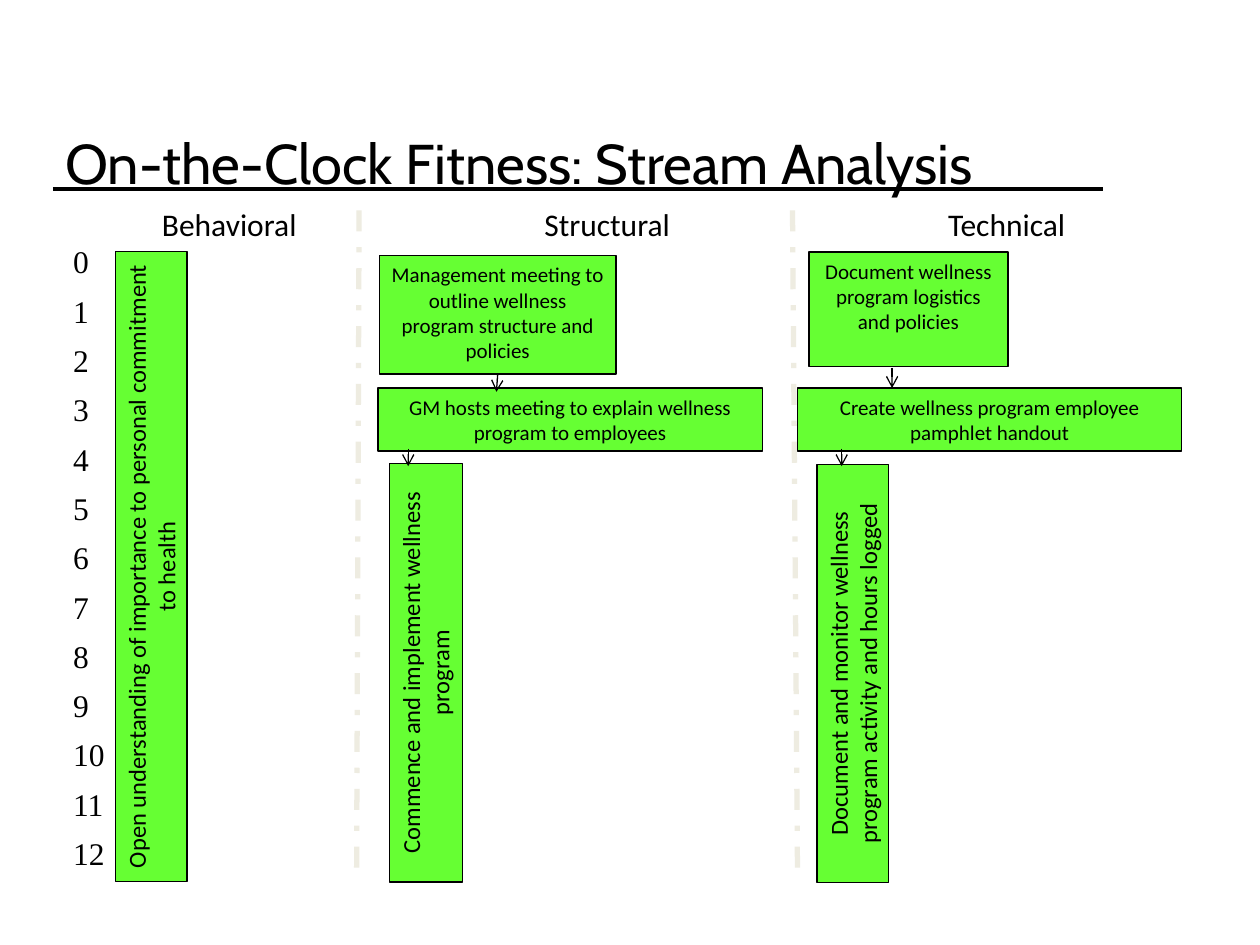
from lxml import etree
from pptx import Presentation
from pptx.dml.color import RGBColor
from pptx.enum.dml import MSO_LINE
from pptx.enum.shapes import MSO_CONNECTOR, MSO_SHAPE
from pptx.enum.text import MSO_ANCHOR, PP_ALIGN
from pptx.oxml.ns import qn
from pptx.util import Inches, Pt

BLACK = RGBColor(0x00, 0x00, 0x00)
GREEN = RGBColor(0x66, 0xFF, 0x33)
BEIGE = RGBColor(0xEE, 0xEC, 0xE1)

presentation = Presentation()
presentation.slide_width = Inches(10)
presentation.slide_height = Inches(7.5)
slide = presentation.slides.add_slide(presentation.slide_layouts[6])


def add_text(text, box, size=18, font="Calibri", align=PP_ALIGN.CENTER,
             anchor=MSO_ANCHOR.TOP, filled=False, rotation=0, inset=None,
             line_spacing=None, space_after=0):
    position = [Inches(value) for value in box]
    if filled:
        shape = slide.shapes.add_shape(MSO_SHAPE.RECTANGLE, *position)
        shape.shadow.inherit = False
        shape.fill.solid()
        shape.fill.fore_color.rgb = GREEN
        shape.line.color.rgb = BLACK
        shape.line.width = Pt(0.75)
    else:
        shape = slide.shapes.add_textbox(*position)
    shape.rotation = rotation
    frame = shape.text_frame
    frame.word_wrap = True
    frame.vertical_anchor = anchor
    if inset is not None:
        frame.margin_left = frame.margin_right = Inches(inset)
        frame.margin_top = frame.margin_bottom = Inches(inset)
    frame.text = text
    for paragraph in frame.paragraphs:
        paragraph.alignment = align
        paragraph.line_spacing = line_spacing
        paragraph.space_after = Pt(space_after)
        paragraph.font.size = Pt(size)
        paragraph.font.name = font
        paragraph.font.color.rgb = BLACK


def add_line(start, end, color=BLACK, width=0.75, dash=None, arrow=False):
    points = [Inches(value) for value in (*start, *end)]
    connector = slide.shapes.add_connector(MSO_CONNECTOR.STRAIGHT, *points)
    connector.line.color.rgb = color
    connector.line.width = Pt(width)
    if dash:
        connector.line.dash_style = dash
    if arrow:
        etree.SubElement(connector.line._get_or_add_ln(), qn("a:tailEnd"), type="arrow")
    etree.SubElement(connector._element.spPr, qn("a:effectLst"))


add_line((0.42, 1.5), (8.75, 1.5), width=2.25)
add_text("On-the-Clock Fitness: Stream Analysis", (0.42, 0.48, 8.5, 1.61),
         size=32, font="Cabin", align=PP_ALIGN.LEFT, anchor=MSO_ANCHOR.MIDDLE)

for heading, left in (("Behavioral", 1), ("Structural", 4), ("Technical", 7.17)):
    add_text(heading, (left, 1.58, 1.64, 0.29))

add_text("\n".join(str(number) for number in range(13)), (0.58, 1.97, 0.55, 5.16),
         font="Times New Roman", align=PP_ALIGN.LEFT, inset=0,
         line_spacing=0.85, space_after=9.8)

for top_x, bottom_x in ((2.85, 2.83), (6.29, 6.33)):
    add_line((top_x, 1.67), (bottom_x, 7), color=BEIGE, width=3, dash=MSO_LINE.DASH_DOT)

vertical_steps = (
    ("Open understanding of importance to personal commitment to health", (-1.3, 4.21, 5, 0.57)),
    ("Commence and implement wellness program", (1.72, 5.05, 3.32, 0.58)),
    ("Document and monitor wellness program activity and hours logged", (5.11, 5.06, 3.32, 0.57)),
)
for text, box in vertical_steps:
    add_text(text, box, size=14, filled=True, rotation=270)

horizontal_steps = (
    ("Management meeting to outline wellness program structure and policies", (3.01, 2.03, 1.88, 0.94)),
    ("GM hosts meeting to explain wellness program to employees", (3, 3.08, 3.05, 0.5)),
    ("Document wellness program logistics and policies", (6.42, 2, 1.58, 0.91)),
    ("Create wellness program employee pamphlet handout", (6.33, 3.08, 3.05, 0.5)),
)
for text, box in horizontal_steps:
    add_text(text, box, size=12, filled=True)

arrows = (
    ((3.95, 2.97), (3.94, 3.11)),
    ((3.24, 3.56), (3.24, 3.7)),
    ((7.08, 2.92), (7.08, 3.08)),
    ((6.68, 3.56), (6.68, 3.7)),
)
for start, end in arrows:
    add_line(start, end, arrow=True)

presentation.save("out.pptx")
